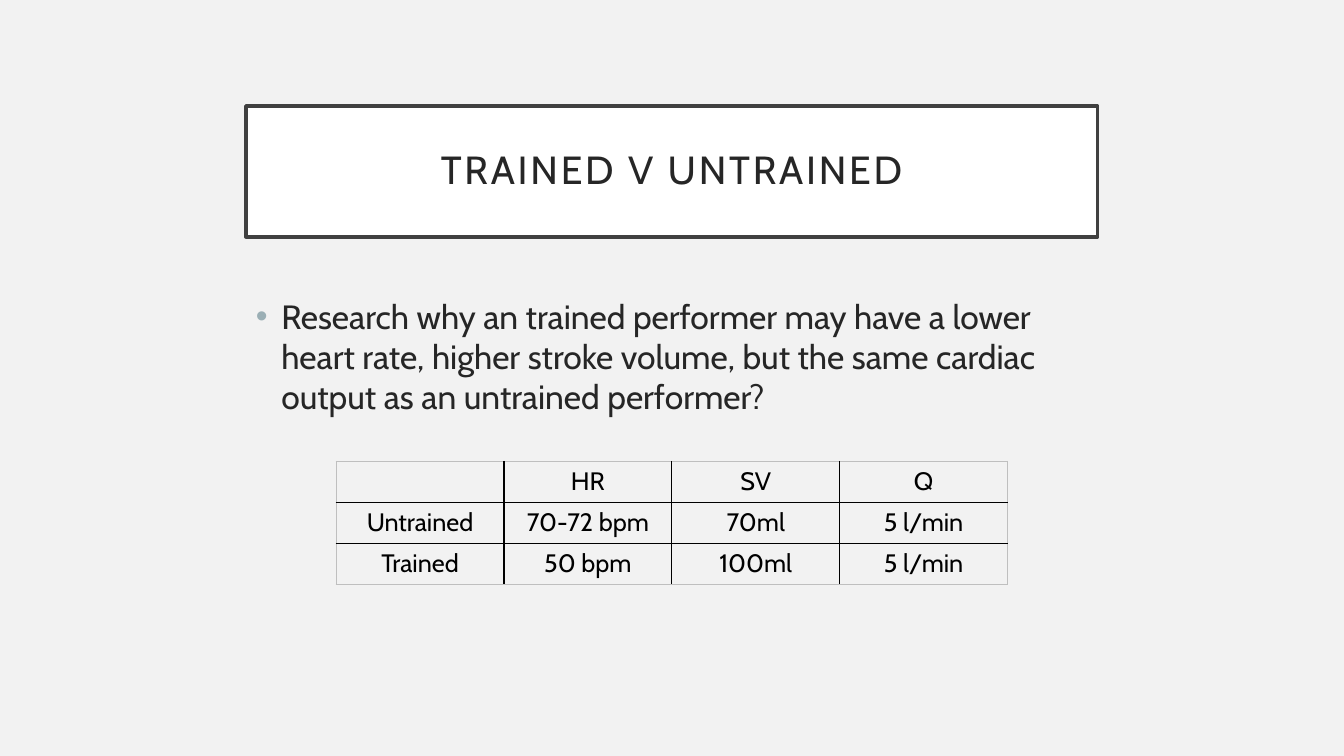
from lxml import etree
from pptx import Presentation
from pptx.dml.color import RGBColor
from pptx.enum.shapes import MSO_SHAPE
from pptx.enum.text import MSO_ANCHOR, PP_ALIGN
from pptx.oxml.ns import qn
from pptx.util import Cm, Pt

RECTANGLE = MSO_SHAPE.RECTANGLE
TOP, MIDDLE = MSO_ANCHOR.TOP, MSO_ANCHOR.MIDDLE
LEFT, CENTER = PP_ALIGN.LEFT, PP_ALIGN.CENTER

FONT = "Cabin"
COLORS = {
    "background": "F2F2F2",
    "title_fill": "FFFFFF",
    "title_line": "404040",
    "text": "262626",
    "bullet": "9BAFB5",
    "table": "000000",
    "table_edge": "BFBFBF",
}


def rgb(name):
    return RGBColor.from_string(COLORS[name])


def write_text(frame, text, size, color="text", align=LEFT, anchor=TOP):
    """Fill the frame's first paragraph and return that paragraph and its run."""
    frame.word_wrap = True
    frame.vertical_anchor = anchor
    paragraph = frame.paragraphs[0]
    paragraph.alignment = align
    run = paragraph.add_run()
    run.text = text
    run.font.name = FONT
    run.font.size = Pt(size)
    run.font.color.rgb = rgb(color)
    return paragraph, run


prs = Presentation()
prs.slide_width, prs.slide_height = Cm(33.87), Cm(19.05)
slide = prs.slides.add_slide(prs.slide_layouts[6])
slide.background.fill.solid()
slide.background.fill.fore_color.rgb = rgb("background")

content_left, content_width = Cm(6.2), Cm(21.46)

# Title
title = slide.shapes.add_shape(RECTANGLE, content_left, Cm(2.67), content_width, Cm(3.3))
title.shadow.inherit = False
title.fill.solid()
title.fill.fore_color.rgb = rgb("title_fill")
title.line.color.rgb = rgb("title_line")
title.line.width = Pt(2.5)
heading, heading_run = write_text(
    title.text_frame, "TRAINED V UNTRAINED", 28, align=CENTER, anchor=MIDDLE
)
heading.line_spacing = 0.9
heading_run.font._element.set("spc", "200")

# Research question
question = slide.shapes.add_textbox(content_left, Cm(7.32), content_width, Cm(8.61))
task, _ = write_text(
    question.text_frame,
    "Research why an trained performer may have a lower heart rate, higher stroke "
    "volume, but the same cardiac output as an untrained performer?",
    24,
)
task.space_before = Pt(10)
task_format = task._p.get_or_add_pPr()
task_format.set("marL", str(Cm(0.64)))
task_format.set("indent", str(Cm(-0.64)))
bullet_color = etree.SubElement(task_format, qn("a:buClr"))
etree.SubElement(bullet_color, qn("a:srgbClr"), val=COLORS["bullet"])
etree.SubElement(task_format, qn("a:buFont"), typeface="Arial")
etree.SubElement(task_format, qn("a:buChar"), char="•")

# Comparison table
values = [
    ["", "HR", "SV", "Q"],
    ["Untrained", "70-72 bpm", "70ml", "5 l/min"],
    ["Trained", "50 bpm", "100ml", "5 l/min"],
]
row_count, column_count = len(values), len(values[0])
column_width, row_height = Cm(4.23), Cm(1.03)
comparison = slide.shapes.add_table(
    row_count, column_count, Cm(8.47), Cm(11.63),
    column_width * column_count, row_height * row_count,
).table
comparison.first_row = False
comparison.horz_banding = False
for column in comparison.columns:
    column.width = column_width
for row in comparison.rows:
    row.height = row_height

for r, row_values in enumerate(values):
    for c, value in enumerate(row_values):
        cell = comparison.cell(r, c)
        write_text(cell.text_frame, value, 18, color="table", align=CENTER)
        outer_sides = {
            "a:lnL": c == 0,
            "a:lnR": c == column_count - 1,
            "a:lnT": r == 0,
            "a:lnB": r == row_count - 1,
        }
        cell_format = cell._tc.get_or_add_tcPr()
        for side, is_outer in outer_sides.items():
            border = etree.SubElement(cell_format, qn(side), w=str(Pt(1)))
            border_fill = etree.SubElement(border, qn("a:solidFill"))
            border_color = COLORS["table_edge" if is_outer else "table"]
            etree.SubElement(border_fill, qn("a:srgbClr"), val=border_color)
        cell.fill.background()

prs.save("out.pptx")
